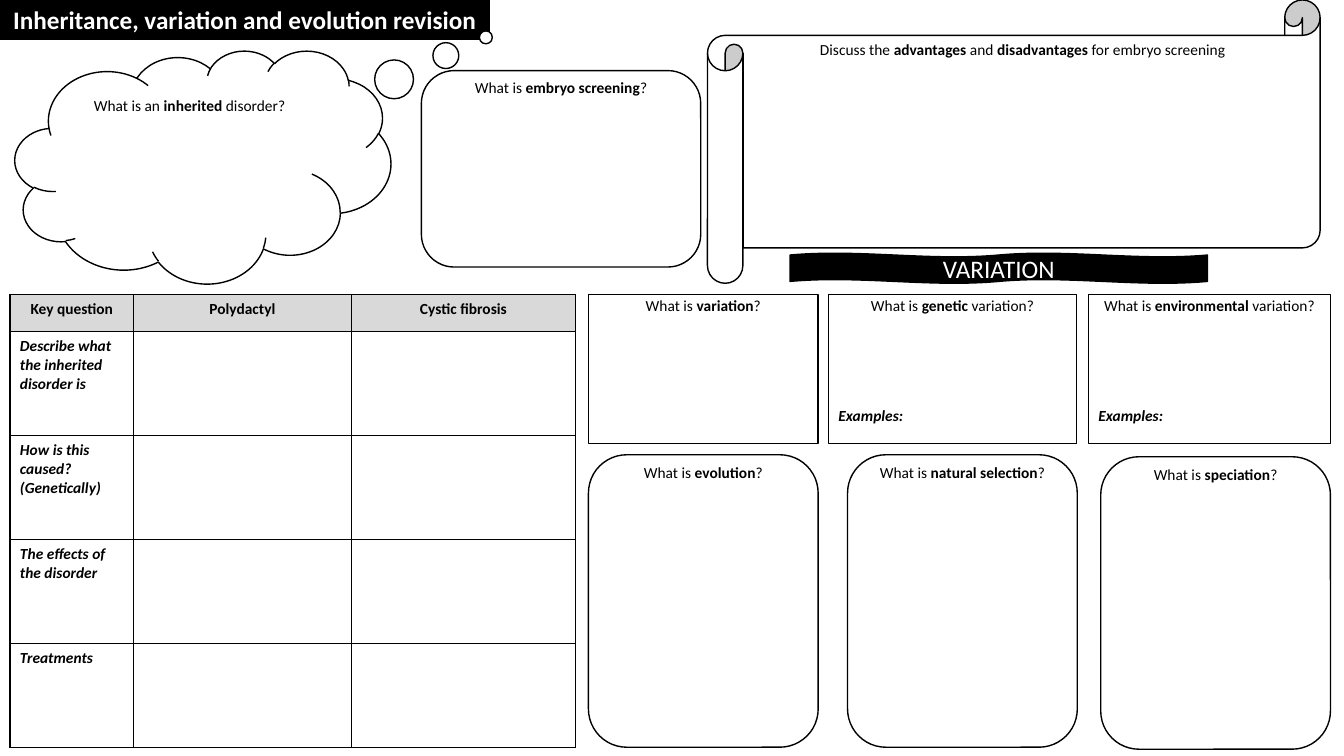
import pptx
import pptx.util
import pptx.dml.color
import pptx.enum.shapes
import pptx.enum.text
import pptx.oxml
from pptx.oxml.ns import nsdecls

Cm, Pt = pptx.util.Cm, pptx.util.Pt
PRESET = pptx.enum.shapes.MSO_SHAPE
ALIGN = pptx.enum.text.PP_ALIGN
ANCHOR = pptx.enum.text.MSO_ANCHOR

COLORS = {"ink": "000000", "paper": "FFFFFF", "header": "D9D9D9"}
FONT = "Calibri"

BANNERS = [
    ("Inheritance, variation and evolution revision", True, PRESET.RECTANGLE, (0, 0, 12.34, 0.99)),
    ("VARIATION", False, PRESET.DOUBLE_WAVE, (19.91, 6.38, 10.52, 0.76)),
]

ROW_TOP, ROW_HEIGHT = 7.42, 3.76
TERM_WIDTH, TERM_HEIGHT = 5.79, 7.37
QUESTIONS = [
    (("What is an ", "inherited", " disorder?"), PRESET.CLOUD_CALLOUT, (0.38, 1.27, 9.47, 5.87), 0.27, False),
    (("What is ", "embryo screening", "?"), PRESET.ROUNDED_RECTANGLE, (10.62, 1.78, 7.04, 4.95), -0.06, False),
    (("Discuss the ", "advantages", " and ", "disadvantages", " for embryo screening"),
     PRESET.HORIZONTAL_SCROLL, (17.83, 0, 15.44, 7.14), 0.13, False),
    (("What is ", "variation", "?"), PRESET.RECTANGLE, (14.83, ROW_TOP, 5.79, ROW_HEIGHT), 0.03, False),
    (("What is ", "genetic", " variation?"), PRESET.RECTANGLE, (20.88, ROW_TOP, 6.25, ROW_HEIGHT), 0.03, True),
    (("What is ", "environmental", " variation?"), PRESET.RECTANGLE, (27.43, ROW_TOP, 6.1, ROW_HEIGHT), 0.03, True),
]
TERMS = [("evolution", 14.83, 11.46), ("natural selection", 21.36, 11.46), ("speciation", 27.74, 11.51)]
QUESTIONS += [
    (("What is ", term, "?"), PRESET.ROUNDED_RECTANGLE, (left, top, TERM_WIDTH, TERM_HEIGHT), -0.08, False)
    for term, left, top in TERMS
]
CLOUD_TAIL = (0.753, -0.556)

DISORDERS = [
    ("Key question", "Polydactyl", "Cystic fibrosis"),
    ("Describe what the inherited disorder is", "", ""),
    ("How is this caused? (Genetically)", "", ""),
    ("The effects of the disorder", "", ""),
    ("Treatments", "", ""),
]
DISORDER_COLUMNS = (3.12, 5.48, 5.66)
DISORDER_ROWS = (0.94,) + (2.62,) * 4


def rgb(name):
    return pptx.dml.color.RGBColor.from_string(COLORS[name])


def add_run(paragraph, text, size=11, color="ink", bold=False, italic=False):
    run = paragraph.add_run()
    run.text = text
    run.font.name, run.font.size = FONT, Pt(size)
    run.font.bold, run.font.italic = bold, italic
    run.font.color.rgb = rgb(color)


def add_box(slide, preset, box, fill):
    shape = slide.shapes.add_shape(preset, *map(Cm, box))
    shape.shadow.inherit = False
    shape.fill.solid()
    shape.fill.fore_color.rgb = rgb(fill)
    shape.line.color.rgb = rgb("ink")
    shape.line.width = Pt(1)
    shape.text_frame.word_wrap = True
    shape.text_frame.paragraphs[0].alignment = ALIGN.CENTER
    return shape


def add_banner(slide, text, bold, preset, box):
    banner = add_box(slide, preset, box, "ink")
    banner.text_frame.vertical_anchor = ANCHOR.MIDDLE
    add_run(banner.text_frame.paragraphs[0], text, 18, "paper", bold)


def add_question(slide, wording, preset, box, inset, has_examples):
    question = add_box(slide, preset, box, "paper")
    if preset == PRESET.CLOUD_CALLOUT:
        question.adjustments[0], question.adjustments[1] = CLOUD_TAIL
    frame = question.text_frame
    frame.vertical_anchor = ANCHOR.TOP
    frame.margin_top = Cm(inset)
    for index, part in enumerate(wording):
        add_run(frame.paragraphs[0], part, bold=index % 2 == 1)
    if has_examples:
        examples = frame.add_paragraph()
        examples.alignment = ALIGN.LEFT
        examples.space_before = Pt(66)
        add_run(examples, "Examples:", bold=True, italic=True)


def add_borders(cell):
    properties = cell._tc.get_or_add_tcPr()
    for side in ("lnL", "lnR", "lnT", "lnB"):
        properties.append(pptx.oxml.parse_xml(
            f'<a:{side} {nsdecls("a")} w="{Pt(1)}"><a:solidFill>'
            f'<a:srgbClr val="{COLORS["ink"]}"/></a:solidFill></a:{side}>'))


def add_disorders(slide):
    table = slide.shapes.add_table(
        len(DISORDERS), len(DISORDER_COLUMNS), Cm(0.25), Cm(ROW_TOP),
        Cm(sum(DISORDER_COLUMNS)), Cm(sum(DISORDER_ROWS))).table
    for column, width in zip(table.columns, DISORDER_COLUMNS):
        column.width = Cm(width)
    for row, height, texts in zip(table.rows, DISORDER_ROWS, DISORDERS):
        row.height = Cm(height)
        is_header = texts == DISORDERS[0]
        for cell, text in zip(row.cells, texts):
            add_borders(cell)
            cell.fill.solid()
            cell.fill.fore_color.rgb = rgb("header" if is_header else "paper")
            paragraph = cell.text_frame.paragraphs[0]
            paragraph.alignment = ALIGN.CENTER if is_header else ALIGN.LEFT
            if text:
                add_run(paragraph, text, bold=True, italic=not is_header)


def main():
    deck = pptx.Presentation()
    deck.slide_width, deck.slide_height = Cm(33.87), Cm(19.05)
    slide = deck.slides.add_slide(deck.slide_layouts[6])
    for banner in BANNERS:
        add_banner(slide, *banner)
    for question in QUESTIONS:
        add_question(slide, *question)
    add_disorders(slide)
    deck.save("out.pptx")


if __name__ == "__main__":
    main()
